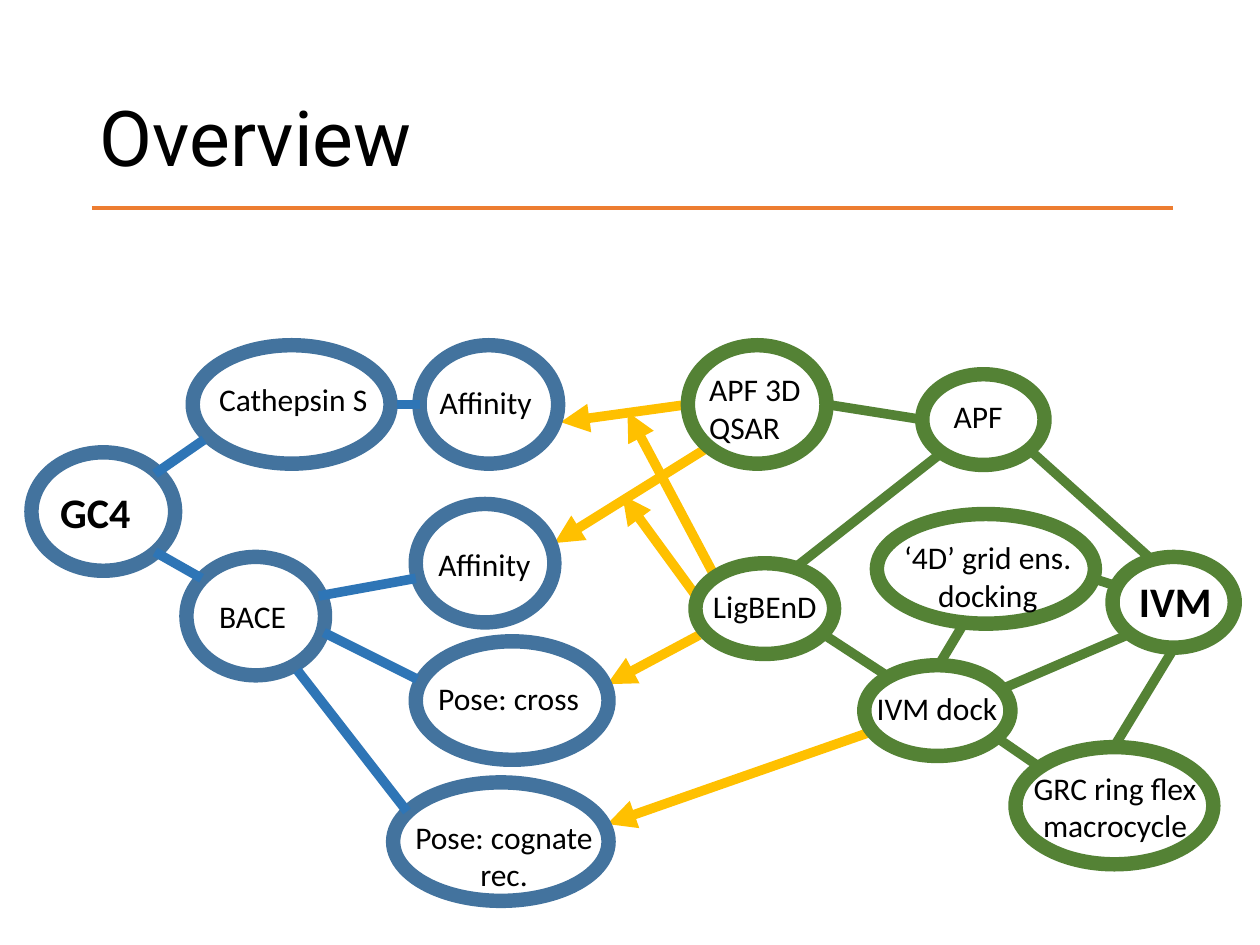
from lxml import etree
from pptx import Presentation
from pptx.dml.color import RGBColor
from pptx.enum.shapes import MSO_CONNECTOR, MSO_SHAPE
from pptx.enum.text import MSO_ANCHOR, MSO_AUTO_SIZE, PP_ALIGN as ALIGN
from pptx.oxml.ns import qn
from pptx.util import Inches, Pt

BLACK = RGBColor(0x00, 0x00, 0x00)
ORANGE = RGBColor(0xED, 0x7D, 0x31)
YELLOW = RGBColor(0xFF, 0xC0, 0x00)
BLUE_RING = RGBColor(0x43, 0x73, 0x9E)
BLUE_LINK = RGBColor(0x2E, 0x75, 0xB6)
GREEN = RGBColor(0x54, 0x82, 0x35)

presentation = Presentation()
presentation.slide_width, presentation.slide_height = Inches(10), Inches(7.5)
slide = presentation.slides.add_slide(presentation.slide_layouts[5])


def write_text(shape, text, font="Calibri", size=18, bold=False, align=ALIGN.LEFT,
               anchor=MSO_ANCHOR.TOP, auto_size=MSO_AUTO_SIZE.SHAPE_TO_FIT_TEXT, spacing=1.0):
    frame = shape.text_frame
    frame.text = text
    frame.word_wrap = True
    frame.auto_size = auto_size
    frame.vertical_anchor = anchor
    for paragraph in frame.paragraphs:
        paragraph.alignment = align
        paragraph.line_spacing = spacing
        paragraph.font.name = font
        paragraph.font.size = Pt(size)
        paragraph.font.bold = bold
        paragraph.font.color.rgb = BLACK


def add_line(x1, y1, x2, y2, color, width=5.5, arrow=False):
    line = slide.shapes.add_connector(
        MSO_CONNECTOR.STRAIGHT, Inches(x1), Inches(y1), Inches(x2), Inches(y2))
    line.line.color.rgb = color
    line.line.width = Pt(width)
    if arrow:
        etree.SubElement(line.line._get_or_add_ln(), qn("a:tailEnd"), type="triangle")
    etree.SubElement(line._element.spPr, qn("a:effectLst"))


# Title and rule
title = slide.shapes.title
title.left, title.top, title.width, title.height = (
    Inches(value) for value in (0.69, 0.4, 8.62, 1.45))
write_text(title, "Overview", font="Roboto", size=44, anchor=MSO_ANCHOR.MIDDLE,
           auto_size=MSO_AUTO_SIZE.NONE, spacing=0.9)
add_line(0.73, 1.65, 9.31, 1.65, ORANGE, width=2.25)

# Arrows from methods to challenge tasks
arrows = [
    (5.62, 3.55, 4.4, 4.31),
    (5.46, 3.21, 4.45, 3.35),
    (5.55, 5.04, 4.82, 5.43),
    (6.88, 5.82, 4.82, 6.54),
    (5.51, 4.71, 4.94, 3.93),
    (5.66, 4.55, 4.98, 3.27),
]
for ends in arrows:
    add_line(*ends, YELLOW, arrow=True)

# Nodes: label, label box, ring box, ring colour, label format
heading = {"size": 24, "bold": True}
centered = {"align": ALIGN.CENTER}
nodes = [
    ("GC4", (0.38, 3.81, 0.94, 0.5), (0.25, 3.59, 1.14, 0.94), BLUE_RING, heading),
    ("Cathepsin S", (1.64, 2.97, 1.56, 0.4), (1.53, 2.74, 1.57, 0.94), BLUE_RING, {}),
    ("BACE", (1.64, 4.69, 0.94, 0.4), (1.48, 4.42, 1.1, 0.94), BLUE_RING, {}),
    ("Affinity", (3.39, 2.99, 1.51, 0.4), (3.33, 2.74, 1.1, 0.94), BLUE_RING, {}),
    ("Affinity", (3.38, 4.28, 1.51, 0.4), (3.3, 4, 1.1, 0.94), BLUE_RING, {}),
    ("Pose: cross", (3.38, 5.34, 1.63, 0.4), (3.3, 5.09, 1.53, 0.94), BLUE_RING, {}),
    ("Pose: cognate\nrec.", (3.19, 6.44, 1.62, 0.71), (3.12, 6.21, 1.71, 0.94),
     BLUE_RING, centered),
    ("APF 3D QSAR", (5.53, 2.89, 1.11, 0.71), (5.46, 2.74, 1.1, 0.94), GREEN, {}),
    ("IVM dock", (6.86, 5.42, 1.3, 0.4), (6.86, 5.28, 1.16, 0.72), GREEN, {}),
    ("GRC ring flex macrocycle", (8.07, 6.05, 1.56, 0.71), (8.06, 5.93, 1.57, 0.93),
     GREEN, centered),
    ("‘4D’ grid ens. docking", (6.96, 4.22, 1.76, 0.71), (6.96, 4.08, 1.73, 0.87),
     GREEN, centered),
    ("APF", (7.47, 3.1, 0.74, 0.4), (7.32, 2.97, 0.97, 0.72), GREEN, {}),
    ("IVM", (8.94, 4.52, 0.82, 0.5), (8.83, 4.42, 0.97, 0.72), GREEN, heading),
    ("LigBEnD", (5.56, 4.61, 1.11, 0.4), (5.52, 4.47, 1.1, 0.72), GREEN, {}),
]
for label, label_box, ring_box, color, text_format in nodes:
    ring = slide.shapes.add_shape(MSO_SHAPE.OVAL, *(Inches(value) for value in ring_box))
    ring.shadow.inherit = False
    ring.fill.background()
    ring.line.color.rgb = color
    ring.line.width = Pt(8.25)
    text_box = slide.shapes.add_textbox(*(Inches(value) for value in label_box))
    write_text(text_box, label, **text_format)

# Links within the challenge and within the methods
links = {
    BLUE_LINK: [
        (1.23, 3.76, 1.62, 3.49),
        (1.23, 4.38, 1.6, 4.59),
        (3.15, 3.21, 3.33, 3.21),
        (2.53, 4.73, 3.3, 4.59),
        (2.57, 5.02, 3.31, 5.39),
        (2.36, 5.32, 3.23, 6.44),
    ],
    GREEN: [
        (8.17, 3.57, 9.15, 4.45),
        (7.97, 5.46, 8.97, 5.03),
        (8.84, 5.93, 9.32, 5.14),
        (8.67, 4.59, 8.86, 4.65),
        (6.56, 3.21, 7.32, 3.33),
        (6.33, 4.49, 7.44, 3.62),
        (6.56, 5.05, 7.02, 5.35),
        (7.92, 5.86, 8.24, 6.08),
        (7.45, 5.28, 7.66, 4.93),
    ],
}
for color, segments in links.items():
    for ends in segments:
        add_line(*ends, color)

presentation.save("out.pptx")
